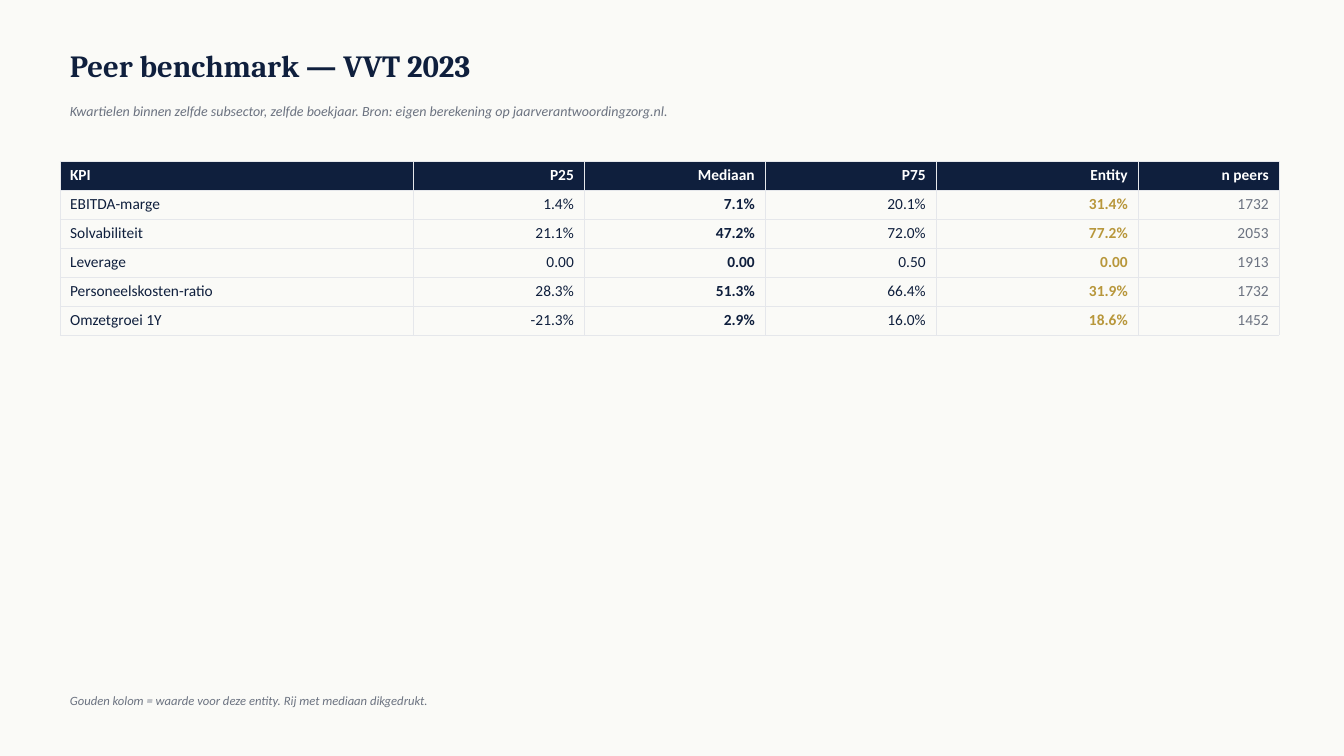
from lxml.etree import SubElement
from pptx import Presentation
from pptx.dml.color import RGBColor
from pptx.enum.text import MSO_ANCHOR as Anchor, PP_ALIGN as Align
from pptx.oxml.ns import qn
from pptx.util import Emu, Pt

# Content
NAVY, GOLD, GREY = "0F1F3D", "B8973B", "6B7280"
WHITE, PAPER, RULE = "FFFFFF", "FAFAF7", "E5E7EB"

# text, top, height, font, size, colour, bold, italic
TEXTS = [
    ("Peer benchmark — VVT 2023", 40, 50, "Cambria", 22, NAVY, True, False),
    ("Kwartielen binnen zelfde subsector, zelfde boekjaar. "
     "Bron: eigen berekening op jaarverantwoordingzorg.nl.",
     96, 30, "Calibri", 10, GREY, False, True),
    ("Gouden kolom = waarde voor deze entity. Rij met mediaan dikgedrukt.",
     685, 30, "Calibri", 9, GREY, False, True),
]

# heading, width, colour, bold
COLUMNS = [
    ("KPI", 353, NAVY, False),
    ("P25", 171, NAVY, False),
    ("Mediaan", 181, NAVY, True),
    ("P75", 171, NAVY, False),
    ("Entity", 202, GOLD, True),
    ("n peers", 141, GREY, False),
]
ROWS = [
    ("EBITDA-marge", "1.4%", "7.1%", "20.1%", "31.4%", "1732"),
    ("Solvabiliteit", "21.1%", "47.2%", "72.0%", "77.2%", "2053"),
    ("Leverage", "0.00", "0.00", "0.50", "0.00", "1913"),
    ("Personeelskosten-ratio", "28.3%", "51.3%", "66.4%", "31.9%", "1732"),
    ("Omzetgroei 1Y", "-21.3%", "2.9%", "16.0%", "18.6%", "1452"),
]

# Layout in px
SLIDE_WIDTH, SLIDE_HEIGHT = 1344, 756
LEFT, TEXT_WIDTH = 60, 1210
TABLE_TOP, ROW_HEIGHT = 161, 29
EMU_PER_PX = 914400 / 100.8


def px(length):
    return Emu(round(length * EMU_PER_PX))


def color(value):
    return RGBColor.from_string(value)


def add_run(paragraph, text, font, size, ink, bold=False, italic=False):
    run = paragraph.add_run()
    run.text = text
    run.font.name = font
    run.font.size = Pt(size)
    run.font.color.rgb = color(ink)
    run.font.bold = bold
    run.font.italic = italic


def add_borders(cell):
    properties = cell._tc.get_or_add_tcPr()
    for side in ("a:lnL", "a:lnR", "a:lnT", "a:lnB"):
        line = SubElement(properties, qn(side), w=str(Pt(0.5)))
        fill = SubElement(line, qn("a:solidFill"))
        SubElement(fill, qn("a:srgbClr"), val=RULE)


def add_text(slide, text, top, height, *style):
    box = slide.shapes.add_textbox(px(LEFT), px(top), px(TEXT_WIDTH), px(height))
    frame = box.text_frame
    frame.word_wrap = True
    frame.vertical_anchor = Anchor.MIDDLE
    add_run(frame.paragraphs[0], text, *style)


def add_benchmark(slide):
    lines = [[heading for heading, *_ in COLUMNS], *ROWS]
    width = sum(column[1] for column in COLUMNS)
    table = slide.shapes.add_table(
        len(lines), len(COLUMNS), px(LEFT), px(TABLE_TOP),
        px(width), px(ROW_HEIGHT * len(lines))).table
    table.horz_banding = False
    for row in table.rows:
        row.height = px(ROW_HEIGHT)

    for c, (_, column_width, ink, bold) in enumerate(COLUMNS):
        table.columns[c].width = px(column_width)
        for r, line in enumerate(lines):
            is_header = r == 0
            cell = table.cell(r, c)
            add_borders(cell)
            if is_header:
                cell.fill.solid()
                cell.fill.fore_color.rgb = color(NAVY)
            else:
                cell.fill.background()
            paragraph = cell.text_frame.paragraphs[0]
            paragraph.alignment = Align.RIGHT if c else Align.LEFT
            add_run(paragraph, line[c], "Calibri", 11,
                    WHITE if is_header else ink, is_header or bold)


def main():
    presentation = Presentation()
    presentation.slide_width = px(SLIDE_WIDTH)
    presentation.slide_height = px(SLIDE_HEIGHT)
    slide = presentation.slides.add_slide(presentation.slide_layouts[6])
    slide.background.fill.solid()
    slide.background.fill.fore_color.rgb = color(PAPER)

    # Title, subtitle and footnote
    for entry in TEXTS:
        add_text(slide, *entry)

    # Quartile table
    add_benchmark(slide)
    presentation.save("out.pptx")


if __name__ == "__main__":
    main()
